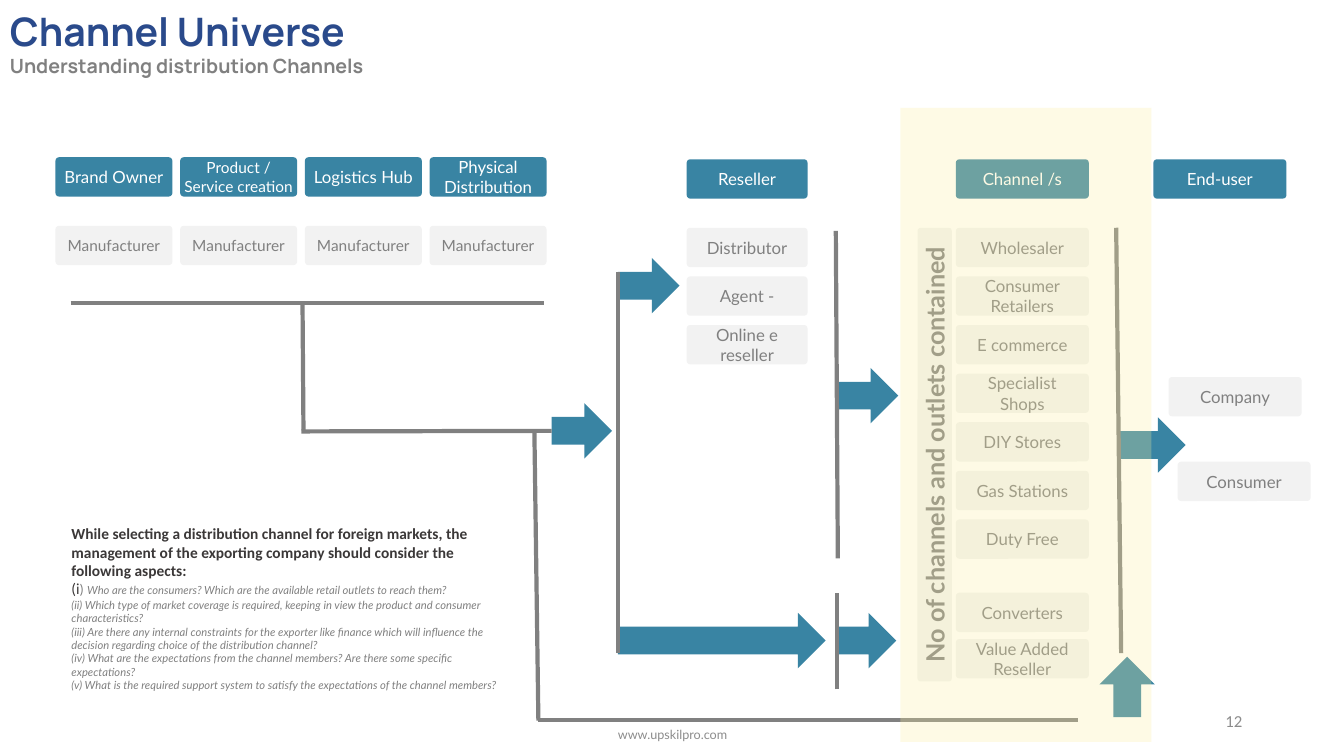
from dataclasses import dataclass

from lxml.etree import SubElement
from pptx import Presentation
from pptx.dml.color import RGBColor
from pptx.enum.shapes import MSO_CONNECTOR, MSO_SHAPE
from pptx.enum.text import MSO_ANCHOR, PP_ALIGN
from pptx.oxml.ns import qn
from pptx.util import Inches, Pt

WIDTH, HEIGHT = Inches(13.33), Inches(7.5)


@dataclass(frozen=True)
class Theme:
    blue: str = "3984A3"
    pale: str = "F2F2F2"
    grey: str = "808080"
    faint: str = "8C8C8C"
    navy: str = "2A4A8B"
    dark: str = "3B3838"
    white: str = "FFFFFF"
    cream: str = "FCF09F"
    cream_opacity: int = 27000
    title: int = 28
    vertical: int = 18
    subtitle: int = 14
    label: int = 12
    small: int = 11
    bracket: int = 10
    footer: int = 9
    note: int = 8
    rule: int = 3


T = Theme()
HEADER = {"name": "Lato", "size": T.label, "color": T.white}
MEMBER = {"name": "Lato", "size": T.label, "color": T.grey}
NOTE = {"name": "Lato", "size": T.note, "color": T.grey, "italic": True}

# Places are percentages of the slide's width and height
BOX_H, ROW_STEP = 5.2, 6.43
HEAD_Y, LIST_Y = 21.07, 30.13
ARROW_H, ARROW_W = 7.33, 4.5

OWNER_X, OWNER_STEP, OWNER_W = 4.13, 9.28, 8.7
OWNERS = [("Brand Owner", T.label), ("Product / Service creation", T.small),
          ("Logistics Hub", T.label), ("Physical Distribution", T.label)]
RESELLER_X, RESELLER_W = 51.09, 9
RESELLERS = ["Distributor", "Agent -", "Online e reseller"]
CHANNEL_X, CHANNEL_W = 71.12, 9.9
CHANNELS = ["Wholesaler", "Consumer Retailers", "E commerce", "Specialist Shops",
            "DIY Stores", "Gas Stations", "Duty Free"]
FINAL_CHANNELS = [("Converters", 78.4), ("Value Added Reseller", 84.53)]
END_USERS = [("Company", 86.95, 49.87), ("Consumer", 87.62, 61.07)]

RULES = [
    (45.98, 86.4, 45.98, 36),        # reseller split
    (83.42, 86.4, 83.05, 30.13),     # right of channels
    (62.34, 73.87, 62.19, 30.53),    # right of resellers
    (62.27, 91.2, 62.27, 78.4),
    (22.58, 56.93, 22.51, 40.13),    # down from owners
    (5.25, 40.13, 40.44, 40.13),     # under owners
    (40.06, 95.2, 80.2, 95.2),       # direct route
    (40.06, 95.33, 39.76, 56.93),
]
ARROWS = [(45.98, 81.07, 15.45, 0), (45.98, 34.13, 4.58, 0), (83.27, 55.2, 4.95, 0),
          (62.34, 48.67, ARROW_W, 0), (62.19, 81.07, ARROW_W, 0),
          (81.62, 87.2, ARROW_W, 270)]

ASPECTS_TITLE = ("While selecting a distribution channel for foreign markets, the management "
                 "of the exporting company should consider the following aspects:")
FIRST_ASPECT = "Who are the consumers? Which are the available retail outlets to reach them?"
ASPECTS = [
    "(ii) Which type of market coverage is required, keeping in view the product and consumer "
    "characteristics?",
    "(iii) Are there any internal constraints for the exporter like finance which will influence "
    "the decision regarding choice of the distribution channel?",
    "(iv) What are the expectations from the channel members? Are there some specific expectations?",
    "(v) What is the required support system to satisfy the expectations of the channel members?",
]


def place(x, y):
    return round(WIDTH * x / 100), round(HEIGHT * y / 100)


def write(tf, paragraphs, align=PP_ALIGN.LEFT, anchor=MSO_ANCHOR.TOP):
    """Fill a frame with paragraphs, each a list of (text, format) runs."""
    tf.word_wrap = True
    tf.vertical_anchor = anchor
    for i, runs in enumerate(paragraphs):
        p = tf.paragraphs[0] if i == 0 else tf.add_paragraph()
        p.alignment = align
        for text, look in runs:
            r = p.add_run()
            r.text = text
            for key, value in look.items():
                if key == "color":
                    r.font.color.rgb = RGBColor.from_string(value)
                else:
                    setattr(r.font, key, Pt(value) if key == "size" else value)


def add_block(s, kind, x, y, w, h, fill, rotation=0):
    sp = s.shapes.add_shape(kind, *place(x, y), *place(w, h))
    sp.shadow.inherit = False
    sp.fill.solid()
    sp.fill.fore_color.rgb = RGBColor.from_string(fill)
    sp.line.fill.background()
    sp.rotation = rotation
    return sp


def add_box(s, text, x, y, w, look, fill=T.pale, h=BOX_H, rotation=0):
    sp = add_block(s, MSO_SHAPE.ROUNDED_RECTANGLE, x, y, w, h, fill, rotation)
    sp.adjustments[0] = 0.09
    write(sp.text_frame, [[(text, look)]], PP_ALIGN.CENTER, MSO_ANCHOR.MIDDLE)
    return sp


def add_header(s, text, x, w, y=HEAD_Y, size=T.label):
    tf = add_box(s, text, x, y, w, {**HEADER, "size": size}, T.blue).text_frame
    for side in ("left", "top", "right", "bottom"):
        setattr(tf, f"margin_{side}", 0)


def add_arrow(s, x, y, w, rotation=0):
    return add_block(s, MSO_SHAPE.RIGHT_ARROW, x, y, w, ARROW_H, T.blue, rotation)


def add_rule(s, x1, y1, x2, y2):
    cx = s.shapes.add_connector(MSO_CONNECTOR.STRAIGHT, *place(x1, y1), *place(x2, y2))
    cx.line.color.rgb = RGBColor.from_string(T.grey)
    cx.line.width = Pt(T.rule)
    SubElement(cx._element.spPr, qn("a:effectLst"))
    return cx


def add_text(s, x, y, w, h, paragraphs, **layout):
    tb = s.shapes.add_textbox(*place(x, y), *place(w, h))
    write(tb.text_frame, paragraphs, **layout)


def add_columns(s):
    for i, (owner, size) in enumerate(OWNERS):
        x = OWNER_X + i * OWNER_STEP
        add_header(s, owner, x, OWNER_W, 20.8, size)
        add_box(s, "Manufacturer", x, 29.87, OWNER_W, {**MEMBER, "size": T.small})
    for head, x, w, members in (("Reseller", RESELLER_X, RESELLER_W, RESELLERS),
                                ("Channel /s", CHANNEL_X, CHANNEL_W, CHANNELS),
                                ("End-user", 85.82, CHANNEL_W, [])):
        add_header(s, head, x, w)
        for i, member in enumerate(members):
            add_box(s, member, x, LIST_Y + i * ROW_STEP, w, MEMBER)
    for channel, y in FINAL_CHANNELS:
        add_box(s, channel, CHANNEL_X, y, CHANNEL_W, MEMBER)
    for user, x, y in END_USERS:
        add_box(s, user, x, y, CHANNEL_W, MEMBER)


def add_flow(s):
    for arrow in ARROWS:
        add_arrow(s, *arrow)
    for rule in RULES:
        add_rule(s, *rule)
    hub = add_arrow(s, 41.04, 53.33, ARROW_W)
    add_rule(s, 22.43, 57.07, 41.04, 57).end_connect(hub, 1)


def add_highlight(s):
    add_box(s, "No of channels and outlets contained", 52.66, 57.87, 33.76,
            {**MEMBER, "size": T.vertical, "bold": True}, h=4.53, rotation=270)
    sp = add_block(s, MSO_SHAPE.RECTANGLE, 66.99, 14.27, 18.68, 83.87, T.cream)
    color = sp._element.spPr.find(".//" + qn("a:srgbClr"))
    SubElement(color, qn("a:alpha"), val=str(T.cream_opacity))


def add_texts(s):
    title = {"name": "Manrope", "bold": True}
    add_text(s, 0, 0.27, 47.04, 10.8, [
        [("Channel Universe", {**title, "size": T.title, "color": T.navy})],
        [("Understanding distribution Channels", {**title, "size": T.subtitle, "color": T.grey})]])
    lead = {"name": "Calibri", "size": T.small, "color": T.dark}
    bracket = {"name": "Calibri", "size": T.bracket, "color": T.grey}
    add_text(s, 4.58, 68.67, 34.13, 25.6, [
        [(ASPECTS_TITLE, {**lead, "bold": True})],
        [("(i", lead), (") ", bracket), (FIRST_ASPECT, NOTE)],
        *[[(aspect, NOTE)] for aspect in ASPECTS]])
    add_text(s, 70.67, 92.67, 22.5, 5.33,
             [[("12", {"name": "Calibri", "size": T.label, "color": T.faint})]],
             align=PP_ALIGN.RIGHT, anchor=MSO_ANCHOR.MIDDLE)
    add_text(s, 33.16, 94.53, 33.76, 5.33,
             [[("www.upskilpro.com", {"name": "Lato", "size": T.footer, "color": T.faint})]],
             align=PP_ALIGN.CENTER, anchor=MSO_ANCHOR.MIDDLE)


def main():
    prs = Presentation()
    prs.slide_width, prs.slide_height = WIDTH, HEIGHT
    s = prs.slides.add_slide(prs.slide_layouts[6])
    add_texts(s)
    add_columns(s)
    add_flow(s)
    add_highlight(s)
    prs.save("out.pptx")


if __name__ == "__main__":
    main()
